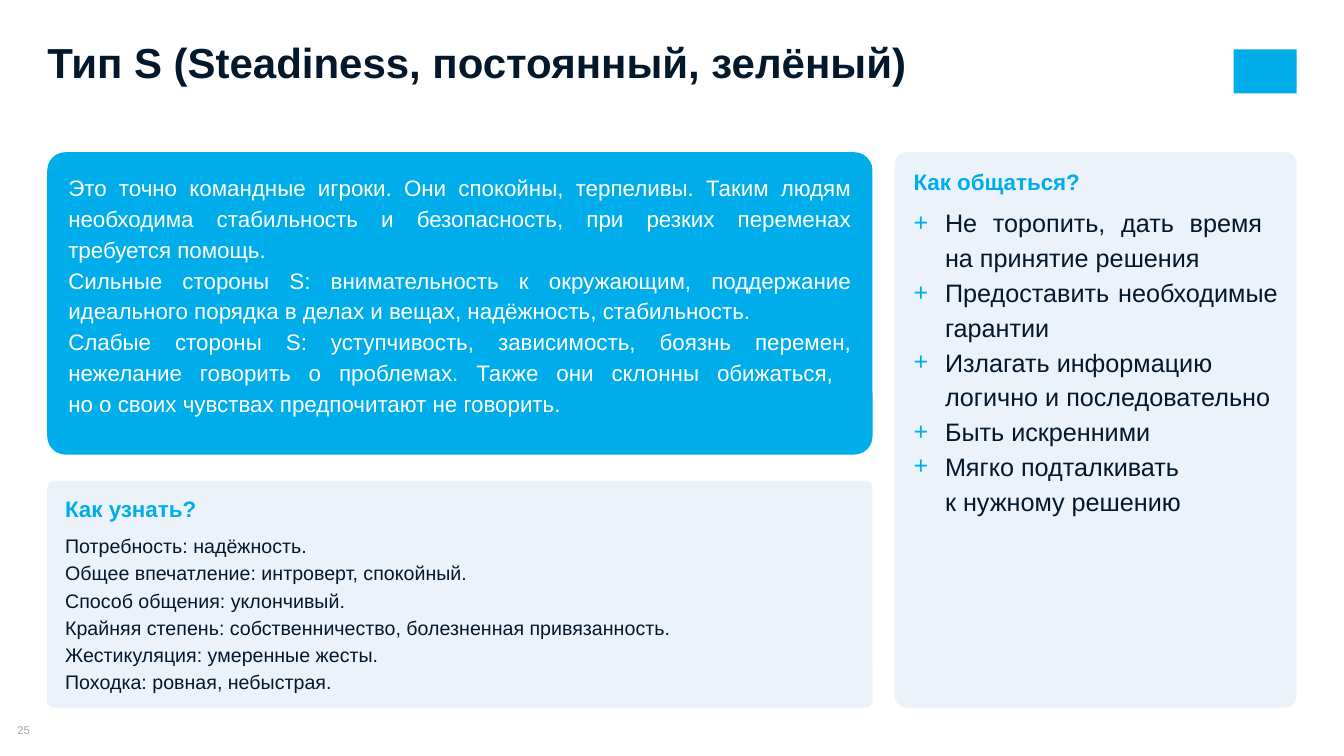
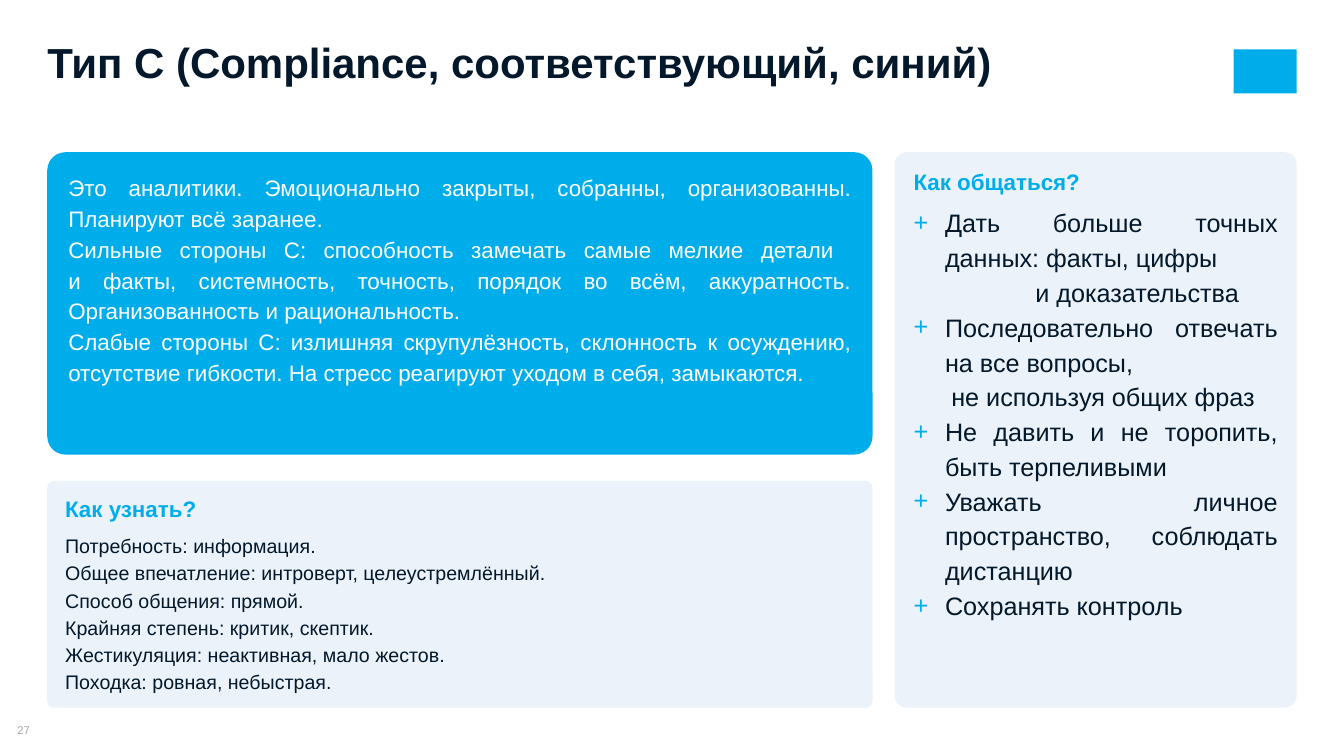
from copy import deepcopy
from dataclasses import dataclass

from lxml import etree
from pptx import Presentation
from pptx.dml.color import RGBColor
from pptx.enum import shapes, text
from pptx.oxml import ns
from pptx import util as u

PX = 9525  # EMU in one px, 96 px to the inch
FONT = "Arial"
ACCENT, PALE, INK, WHITE, GREY = "00ADEB", "EBF2FA", "03182B", "FFFFFF", "A6A6A6"
TWO_CONTENT_LAYOUT = 3
LEFT, TOP, RIGHT, BOTTOM = 45, 145, 1235, 674
WIDE, INTRO_HEIGHT, RECOGNISE_TOP, TALK_LEFT = 786, 288, 458, 852
BULLET_INDENT = 30


@dataclass(frozen=True)
class Box:
    left: int
    top: int
    width: int
    height: int


@dataclass(frozen=True)
class Panel:
    box: Box
    fill: str
    corner: float
    inset: int


@dataclass(frozen=True)
class Item:
    """List entry; one with an offset continues the entry above without a bullet."""
    text: str
    justify: bool = True
    offset: int = 0


@dataclass(frozen=True)
class TypePage:
    number: int
    title: str
    intro: tuple[str, ...]
    traits: tuple[str, ...]
    advice: tuple[Item, ...]


LOGO = Box(1175, 47, 60, 42)
NUMBER = Box(0, 689, 45, 13)
TITLE = Box(LEFT, 44, 1009, 39)
INTRO = Panel(Box(LEFT, TOP, WIDE, INTRO_HEIGHT), ACCENT, 0.06, 15)
RECOGNISE = Panel(Box(LEFT, RECOGNISE_TOP, WIDE, BOTTOM - RECOGNISE_TOP), PALE, 0.03, 17)
TALK = Panel(Box(TALK_LEFT, TOP, RIGHT - TALK_LEFT, BOTTOM - TOP), PALE, 0.03, 18)

PAGES = (
    TypePage(
        25,
        "Тип S (Steadiness, постоянный, зелёный)",
        (
            "Это точно командные игроки. Они спокойны, терпеливы. Таким людям "
            "необходима стабильность и безопасность, при резких переменах требуется помощь.",
            "Сильные стороны S: внимательность к окружающим, поддержание идеального "
            "порядка в делах и вещах, надёжность, стабильность.",
            "Слабые стороны S: уступчивость, зависимость, боязнь перемен, нежелание "
            "говорить о проблемах. Также они склонны обижаться, \v"
            "но о своих чувствах предпочитают не говорить.",
        ),
        (
            "Потребность: надёжность.",
            "Общее впечатление: интроверт, спокойный.",
            "Способ общения: уклончивый.",
            "Крайняя степень: собственничество, болезненная привязанность.",
            "Жестикуляция: умеренные жесты.",
            "Походка: ровная, небыстрая.",
        ),
        (
            Item("Не торопить, дать время \vна принятие решения"),
            Item("Предоставить необходимые гарантии"),
            Item("Излагать информацию логично и последовательно", justify=False),
            Item("Быть искренними"),
            Item("Мягко подталкивать\vк нужному решению", justify=False),
        ),
    ),
    TypePage(
        27,
        "Тип C (Сompliance, соответствующий, cиний)",
        (
            "Это аналитики. Эмоционально закрыты, собранны, организованны. "
            "Планируют всё заранее.",
            "Сильные стороны С: способность замечать самые мелкие детали \v"
            "и факты, системность, точность, порядок во всём, аккуратность. "
            "Организованность и рациональность.",
            "Слабые стороны С: излишняя скрупулёзность, склонность к осуждению, "
            "отсутствие гибкости. На стресс реагируют уходом в себя, замыкаются.",
        ),
        (
            "Потребность: информация.",
            "Общее впечатление: интроверт, целеустремлённый.",
            "Способ общения: прямой.",
            "Крайняя степень: критик, скептик.",
            "Жестикуляция: неактивная, мало жестов.",
            "Походка: ровная, небыстрая.",
        ),
        (
            Item("Дать больше точных данных: факты, цифры"),
            Item("и доказательства", offset=86),
            Item("Последовательно отвечать на все вопросы,"),
            Item("не используя общих фраз", offset=6),
            Item("Не давить и не торопить, быть терпеливыми"),
            Item("Уважать личное пространство, соблюдать дистанцию"),
            Item("Сохранять контроль"),
        ),
    ),
)


def colour(value: str) -> RGBColor:
    return RGBColor.from_string(value)


def place(shape, box: Box) -> None:
    shape.left, shape.top = box.left * PX, box.top * PX
    shape.width, shape.height = box.width * PX, box.height * PX


def prepare_frame(shape, inset: int = 0, inset_top: int = 0, anchor=text.MSO_ANCHOR.TOP):
    frame = shape.text_frame
    frame.word_wrap = True
    frame.auto_size = text.MSO_AUTO_SIZE.NONE
    frame.vertical_anchor = anchor
    frame.margin_left = frame.margin_right = inset * PX
    frame.margin_top = frame.margin_bottom = inset_top * PX
    return frame


def write(frame, words: str, *, size: int, color: str, bold: bool = False,
          align=text.PP_ALIGN.LEFT, spacing: float = 1.0, after: int = 0,
          indent: int = 0, bullet: str = "") -> None:
    """Fill the empty first paragraph of the frame, or add one after the last."""
    first = frame.paragraphs[0]
    para = frame.add_paragraph() if first.runs else first
    para.text = words
    para.alignment = align
    para.line_spacing = spacing
    para.space_before, para.space_after = u.Pt(0), u.Pt(after)
    for span in para.runs:
        span.font.name = FONT
        span.font.size = u.Pt(size)
        span.font.bold = bold
        span.font.color.rgb = colour(color)
    for line_break in para._p.findall(ns.qn("a:br")):
        line_break.insert(0, deepcopy(para.runs[0]._r.rPr))
    properties = para._p.get_or_add_pPr()
    properties.set("marL", str(indent * PX))
    properties.set("indent", str(-BULLET_INDENT * PX if bullet else 0))
    if bullet:
        bullet_colour = etree.SubElement(properties, ns.qn("a:buClr"))
        etree.SubElement(bullet_colour, ns.qn("a:srgbClr"), val=ACCENT)
        etree.SubElement(properties, ns.qn("a:buFont"), typeface=FONT)
        etree.SubElement(properties, ns.qn("a:buChar"), char=bullet)
    else:
        etree.SubElement(properties, ns.qn("a:buNone"))


def add_block(page, kind, box: Box, fill: str):
    shape = page.shapes.add_shape(kind, 0, 0, 0, 0)
    place(shape, box)
    shape.shadow.inherit = False
    shape.fill.solid()
    shape.fill.fore_color.rgb = colour(fill)
    shape.line.fill.background()
    return shape


def add_panel(page, panel: Panel):
    shape = add_block(page, shapes.MSO_SHAPE.ROUNDED_RECTANGLE, panel.box, panel.fill)
    shape.adjustments[0] = panel.corner
    return shape


def add_list_panel(page, body, panel: Panel, heading: str):
    """Lay the body placeholder over a panel and return its frame, headed."""
    background = add_panel(page, panel)
    body._element.addprevious(background._element)
    place(body, panel.box)
    frame = prepare_frame(body, panel.inset, panel.inset - 3)
    write(frame, heading, size=16, color=ACCENT, bold=True, after=6)
    return frame


def add_page_furniture(page, number: int) -> None:
    add_block(page, shapes.MSO_SHAPE.RECTANGLE, LOGO, ACCENT)
    box = page.shapes.add_textbox(0, 0, 0, 0)
    place(box, NUMBER)
    frame = prepare_frame(box, anchor=text.MSO_ANCHOR.MIDDLE)
    write(frame, str(number), size=8, color=GREY, align=text.PP_ALIGN.CENTER)


def add_type_page(deck, content: TypePage) -> None:
    page = deck.slides.add_slide(deck.slide_layouts[TWO_CONTENT_LAYOUT])
    add_page_furniture(page, content.number)

    title = page.shapes.title
    place(title, TITLE)
    write(prepare_frame(title), content.title, size=30, color=INK, bold=True, spacing=0.8)

    frame = add_list_panel(page, page.placeholders[1], TALK, "Как общаться?")
    for item in content.advice:
        write(frame, item.text, size=18, color=INK, spacing=1.15,
              align=text.PP_ALIGN.JUSTIFY if item.justify else text.PP_ALIGN.LEFT,
              indent=BULLET_INDENT + item.offset, bullet="" if item.offset else "+")

    frame = add_list_panel(page, page.placeholders[2], RECOGNISE, "Как узнать?")
    for trait in content.traits:
        write(frame, trait, size=14, color=INK, spacing=1.15, align=text.PP_ALIGN.JUSTIFY)

    frame = prepare_frame(add_panel(page, INTRO), INTRO.inset, INTRO.inset - 3)
    for words in content.intro:
        write(frame, words, size=16, color=WHITE, spacing=1.15, align=text.PP_ALIGN.JUSTIFY)


def main() -> None:
    deck = Presentation()
    deck.slide_width, deck.slide_height = 1280 * PX, 720 * PX
    for content in PAGES:
        add_type_page(deck, content)
    deck.save("out.pptx")


if __name__ == "__main__":
    main()
